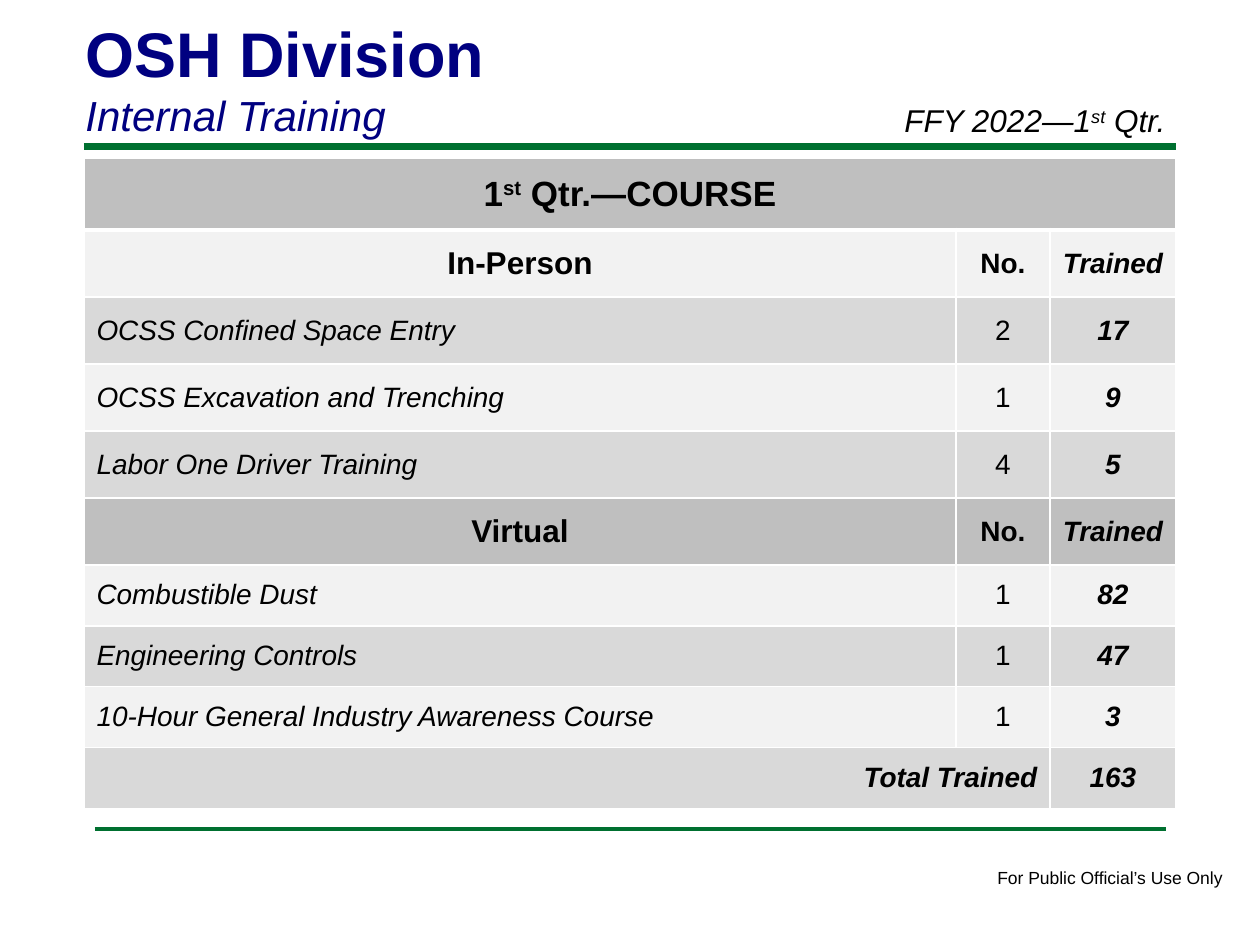
"""Build the OSH Division internal training slide."""
from typing import NamedTuple

from lxml.etree import SubElement
from pptx import Presentation
from pptx.dml.color import RGBColor
from pptx.enum.shapes import MSO_CONNECTOR
from pptx.enum.text import MSO_ANCHOR, MSO_AUTO_SIZE, PP_ALIGN as Align
from pptx.oxml.ns import qn
from pptx.util import Emu, Pt

PX = 914400 / 126
FONT = "Arial"
BLACK = RGBColor(0x00, 0x00, 0x00)
WHITE = RGBColor(0xFF, 0xFF, 0xFF)
NAVY = RGBColor(0x00, 0x00, 0x80)
GREEN = RGBColor(0x00, 0x70, 0x30)
HEAD = RGBColor(0xBF, 0xBF, 0xBF)
LIGHT = RGBColor(0xF2, 0xF2, 0xF2)
MID = RGBColor(0xD9, 0xD9, 0xD9)


class Text(NamedTuple):
    """A paragraph in which ^ marks surround superscript."""
    text: str
    size: int
    bold: bool = False
    italic: bool = False
    color: RGBColor = BLACK
    align: Align = Align.LEFT


class Box(NamedTuple):
    """A text box in px."""
    x: int
    y: int
    w: int
    h: int
    lines: list[Text]
    wrap: bool = True


class Rule(NamedTuple):
    """A horizontal line in px, with its width in points."""
    x1: int
    x2: int
    y: int
    width: int


class Row(NamedTuple):
    """A table row; None continues the cell to its left."""
    height: int
    fill: RGBColor
    cells: list[Text | None]


def heading(height: int, fill: RGBColor, title: str) -> Row:
    """Return the heading row of a course group."""
    return Row(height, fill, [
        Text(title, 18, bold=True, align=Align.CENTER),
        Text("No.", 16, bold=True, align=Align.CENTER),
        Text("Trained", 16, True, True, align=Align.CENTER)])


def course(height: int, fill: RGBColor, name: str, count: int, trained: int) -> Row:
    """Return the row of one course."""
    return Row(height, fill, [
        Text(name, 16, italic=True),
        Text(str(count), 16, align=Align.CENTER),
        Text(str(trained), 16, True, True, align=Align.CENTER)])


RULES = [Rule(84, 1176, 147, 4), Rule(95, 1166, 829, 2)]
BOXES = [
    Box(985, 861, 253, 34, [Text("For Public Official’s Use Only", 10)], wrap=False),
    Box(73, 8, 1040, 140, [Text("OSH Division", 36, bold=True, color=NAVY),
                           Text("Internal Training", 24, italic=True, color=NAVY)]),
    Box(892, 95, 315, 50, [Text("FFY 2022—1^st^ Qtr.", 18, italic=True)]),
]
COLUMNS = [872, 94, 126]
ROWS = [
    Row(72, HEAD, [Text("1^st^ Qtr.—COURSE", 20, bold=True, align=Align.CENTER), None, None]),
    heading(67, LIGHT, "In-Person"),
    course(67, MID, "OCSS Confined Space Entry", 2, 17),
    course(67, LIGHT, "OCSS Excavation and Trenching", 1, 9),
    course(67, MID, "Labor One Driver Training", 4, 5),
    heading(67, HEAD, "Virtual"),
    course(61, LIGHT, "Combustible Dust", 1, 82),
    course(61, MID, "Engineering Controls", 1, 47),
    course(61, LIGHT, "10-Hour General Industry Awareness Course", 1, 3),
    Row(61, MID, [Text("Total Trained", 16, True, True, align=Align.RIGHT), None,
                  Text("163", 16, True, True, align=Align.CENTER)]),
]


def px(*values: int) -> list[Emu]:
    """Turn px into EMU."""
    return [Emu(round(v * PX)) for v in values]


def write(tf, lines: list[Text]) -> None:
    """Fill a text frame with paragraphs."""
    for i, line in enumerate(lines):
        p = tf.add_paragraph() if i else tf.paragraphs[0]
        p.alignment = line.align
        formats = {"name": FONT, "size": Pt(line.size), "bold": line.bold, "italic": line.italic}
        for j, part in enumerate(line.text.split("^")):
            r = p.add_run()
            r.text = part
            for name, value in formats.items():
                setattr(r.font, name, value)
            r.font.color.rgb = line.color
            if j % 2:
                r._r.get_or_add_rPr().set("baseline", "30000")


def draw_rule(slide, rule: Rule) -> None:
    """Draw a horizontal line."""
    cn = slide.shapes.add_connector(
        MSO_CONNECTOR.STRAIGHT, *px(rule.x1, rule.y, rule.x2, rule.y))
    cn.line.color.rgb = GREEN
    cn.line.width = Pt(rule.width)
    SubElement(cn._element.spPr, qn("a:effectLst"))


def draw_box(slide, box: Box) -> None:
    """Draw a text box."""
    tf = slide.shapes.add_textbox(*px(box.x, box.y, box.w, box.h)).text_frame
    tf.word_wrap = box.wrap
    tf.auto_size = MSO_AUTO_SIZE.SHAPE_TO_FIT_TEXT
    write(tf, box.lines)


def set_borders(cell, top: int, bottom: int) -> None:
    """Give a cell white borders, with widths in points."""
    tc_pr = cell._tc.get_or_add_tcPr()
    widths = {"a:lnL": 1, "a:lnR": 1, "a:lnT": top, "a:lnB": bottom}
    for i, (tag, width) in enumerate(widths.items()):
        ln = tc_pr.makeelement(qn(tag), {"w": str(Pt(width))})
        fill = SubElement(ln, qn("a:solidFill"))
        SubElement(fill, qn("a:srgbClr"), val=str(WHITE))
        tc_pr.insert(i, ln)


def draw_table(slide, x: int, y: int, columns: list[int], rows: list[Row]) -> None:
    """Draw the course table."""
    size = px(x, y, sum(columns), sum(row.height for row in rows))
    table = slide.shapes.add_table(len(rows), len(columns), *size).table
    table.first_row = table.horz_banding = False
    for column, width in zip(table.columns, px(*columns)):
        column.width = width
    for i, row in enumerate(rows):
        table.rows[i].height = px(row.height)[0]
        for j, text in enumerate(row.cells):
            cell = table.cell(i, j)
            cell.fill.solid()
            cell.fill.fore_color.rgb = row.fill
            cell.vertical_anchor = MSO_ANCHOR.MIDDLE
            set_borders(cell, top=3 if i == 1 else 1, bottom=3 if i == 0 else 1)
            if text:
                write(cell.text_frame, [text])
                end = j
                while end + 1 < len(columns) and row.cells[end + 1] is None:
                    end += 1
                if end > j:
                    cell.merge(table.cell(i, end))


def main() -> None:
    """Build and save the slide."""
    prs = Presentation()
    prs.slide_width, prs.slide_height = px(1260, 945)
    s = prs.slides.add_slide(prs.slide_layouts[6])
    for rule in RULES:
        draw_rule(s, rule)
    for box in BOXES:
        draw_box(s, box)
    draw_table(s, 84, 158, COLUMNS, ROWS)
    prs.save("out.pptx")


if __name__ == "__main__":
    main()
